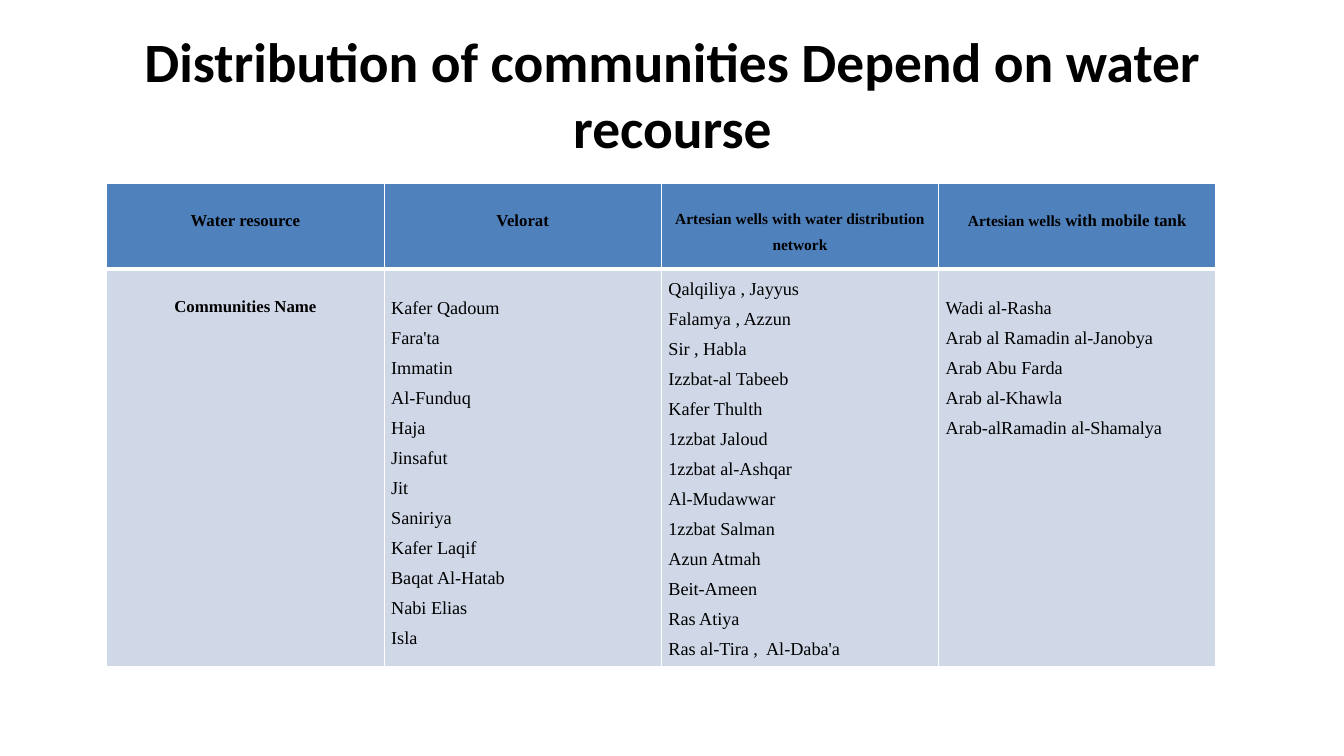
import pptx
import pptx.dml.color
import pptx.enum.text
import pptx.oxml.ns
import pptx.util
from lxml import etree

Inches = pptx.util.Inches
Pt = pptx.util.Pt
ALIGN = pptx.enum.text.PP_ALIGN

HEADINGS = [
    [("Water resource", 12)],
    [("Velorat", 12)],
    [("Artesian wells with water distribution network", 11)],
    [("Artesian wells", 11), (" with mobile tank", 12)],
]
NETWORK_COLUMN = 2
COMMUNITIES = [
    ["Kafer Qadoum", "Fara'ta", "Immatin", "Al-Funduq", "Haja", "Jinsafut",
     "Jit", "Saniriya", "Kafer Laqif", "Baqat Al-Hatab", "Nabi Elias", "Isla"],
    ["Qalqiliya , Jayyus", "Falamya , Azzun", "Sir , Habla",
     "Izzbat-al Tabeeb", "Kafer Thulth", "1zzbat Jaloud", "1zzbat al-Ashqar",
     "Al-Mudawwar", "1zzbat Salman", "Azun Atmah", "Beit-Ameen", "Ras Atiya",
     "Ras al-Tira ,  Al-Daba'a"],
    ["Wadi al-Rasha", "Arab al Ramadin al-Janobya", "Arab Abu Farda",
     "Arab al-Khawla", "Arab-alRamadin al-Shamalya"],
]


def color(value):
    return pptx.dml.color.RGBColor.from_string(value)


class SlideBuilder:
    title_font = "Calibri"
    table_font = "Times New Roman"
    text = "000000"
    header_fill = "4F81BD"
    body_fill = "D0D8E8"
    border = "FFFFFF"
    top_gap = 0.19

    def __init__(self, slide):
        self.slide = slide

    def format_font(self, font, name, size, bold):
        font.name = name
        font.size = Pt(size)
        font.bold = bold
        font.color.rgb = color(self.text)

    def title(self, text, left, top, width, height):
        shape = self.slide.shapes.title
        shape.left, shape.top = Inches(left), Inches(top)
        shape.width, shape.height = Inches(width), Inches(height)
        frame = shape.text_frame
        frame.text = text
        frame.word_wrap = True
        frame.vertical_anchor = pptx.enum.text.MSO_ANCHOR.MIDDLE
        paragraph = frame.paragraphs[0]
        paragraph.alignment = ALIGN.CENTER
        self.format_font(paragraph.font, self.title_font, 39.6, True)

    def table(self, left, top, column_widths, row_heights):
        frame = self.slide.shapes.add_table(
            len(row_heights), len(column_widths), Inches(left), Inches(top),
            Inches(sum(column_widths)), Inches(sum(row_heights)))
        for column, width in zip(frame.table.columns, column_widths):
            column.width = Inches(width)
        for row, height in zip(frame.table.rows, row_heights):
            row.height = Inches(height)
        return frame.table

    def borders(self, cell, widths):
        properties = cell._tc.get_or_add_tcPr()
        for side, width in widths.items():
            line = etree.SubElement(
                properties, pptx.oxml.ns.qn(f"a:ln{side}"), w=str(Pt(width)))
            fill = etree.SubElement(line, pptx.oxml.ns.qn("a:solidFill"))
            etree.SubElement(
                fill, pptx.oxml.ns.qn("a:srgbClr"), val=self.border)

    def cell(self, cell, paragraphs, is_header, alignment, bold, top_gap):
        cell.margin_left = cell.margin_right = Inches(0.07)
        cell.margin_top, cell.margin_bottom = Inches(top_gap), 0
        thick_side = "B" if is_header else "T"
        self.borders(
            cell, {side: 3 if side == thick_side else 1 for side in "LRTB"})
        cell.fill.solid()
        cell.fill.fore_color.rgb = color(
            self.header_fill if is_header else self.body_fill)
        frame = cell.text_frame
        for index, runs in enumerate(paragraphs):
            paragraph = frame.add_paragraph() if index else frame.paragraphs[0]
            paragraph.alignment = alignment
            paragraph.line_spacing = 1.5
            self.format_font(
                paragraph.font, self.table_font, runs[0][1], bold)
            for text, size in runs:
                run = paragraph.add_run()
                run.text = text
                if size != runs[0][1]:
                    run.font.size = Pt(size)

    def heading_cell(self, cell, runs, is_header):
        self.cell(cell, [runs], is_header, ALIGN.CENTER, True, self.top_gap)

    def list_cell(self, cell, names, top_gap):
        paragraphs = [[(name, 13)] for name in names]
        self.cell(cell, paragraphs, False, ALIGN.JUSTIFY, False, top_gap)


def main():
    presentation = pptx.Presentation()
    presentation.slide_width = Inches(13.33)
    presentation.slide_height = Inches(7.5)
    slide = presentation.slides.add_slide(presentation.slide_layouts[5])
    builder = SlideBuilder(slide)

    builder.title("Distribution of communities Depend on water recourse",
                  0.67, 0.3, 12, 1.25)
    table = builder.table(1.06, 1.82, [2.75] * 4, [0.85, 3.94])
    for column, runs in enumerate(HEADINGS):
        builder.heading_cell(table.cell(0, column), runs, True)
    builder.heading_cell(table.cell(1, 0), [("Communities Name", 12)], False)
    for column, names in enumerate(COMMUNITIES, start=1):
        top_gap = 0 if column == NETWORK_COLUMN else builder.top_gap
        builder.list_cell(table.cell(1, column), names, top_gap)

    presentation.save("out.pptx")


if __name__ == "__main__":
    main()
